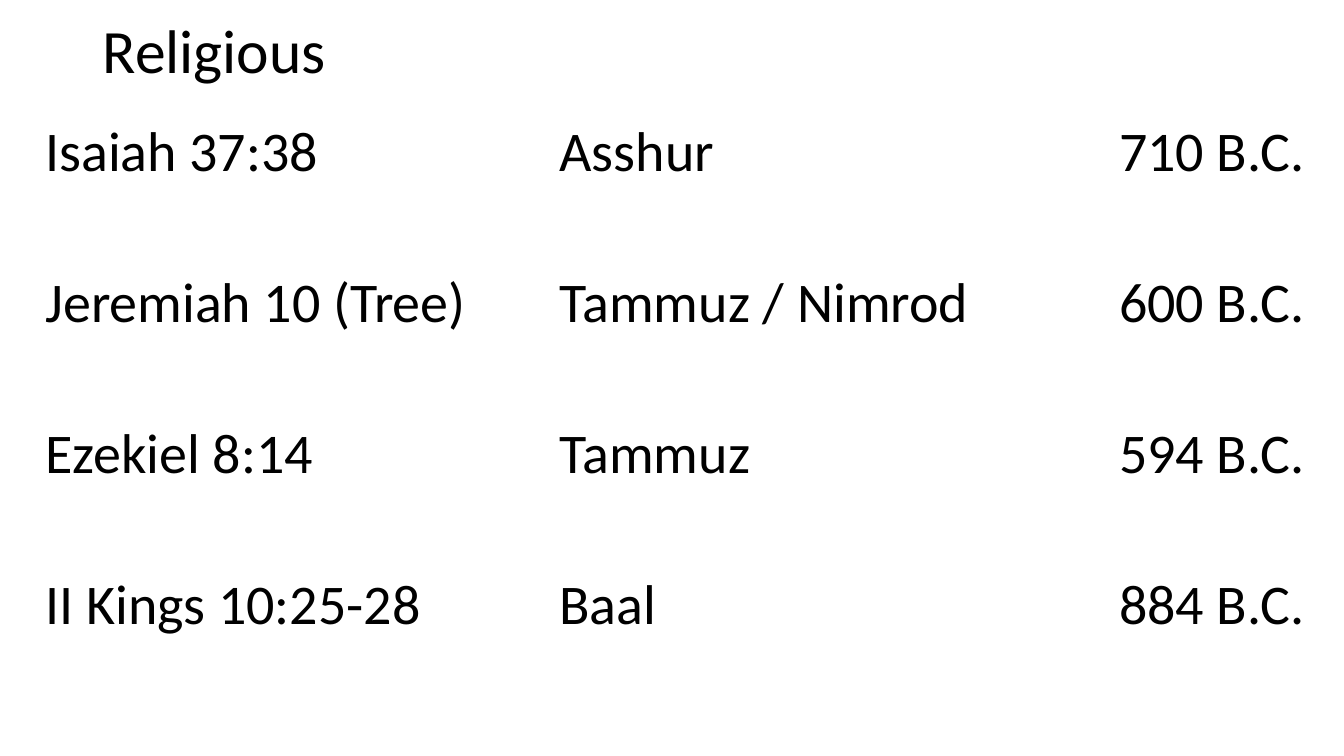
from pptx import Presentation
from pptx.dml.color import RGBColor
from pptx.enum.text import MSO_ANCHOR
from pptx.util import Inches, Pt

FONT = "Calibri"
BLACK = "000000"
COLUMN_WIDTHS = (5.1, 5.55, 2.07)
ROW_HEIGHT = 1.5
REFERENCES = (
    ("Isaiah 37:38", "Asshur", "710 B.C."),
    ("Jeremiah 10 (Tree)", "Tammuz / Nimrod", "600 B.C."),
    ("Ezekiel 8:14", "Tammuz", "594 B.C."),
    ("II Kings 10:25-28", "Baal", "884 B.C."),
)


def color(value):
    """Return the colour for a hex string."""
    return RGBColor.from_string(value)


def write(tf, text, size):
    """Put one styled paragraph in a text frame and return it."""
    p = tf.paragraphs[0]
    p.text = text
    p.font.name = FONT
    p.font.size = Pt(size)
    p.font.color.rgb = color(BLACK)
    return p


def add_title(s, text):
    """Add the slide heading."""
    box = s.shapes.add_textbox(Inches(0.92), Inches(-0.16), Inches(11.5), Inches(1.39))
    tf = box.text_frame
    tf.word_wrap = True
    tf.vertical_anchor = MSO_ANCHOR.MIDDLE
    write(tf, text, 44).line_spacing = 0.9


def add_references(s, rows):
    """Add the plain table of references, deities and dates."""
    frame = s.shapes.add_table(
        len(rows), len(COLUMN_WIDTHS), Inches(0.35), Inches(1.12),
        Inches(sum(COLUMN_WIDTHS)), Inches(ROW_HEIGHT * len(rows)))
    table = frame.table
    table.first_row = False
    table.horz_banding = False
    for column, width in zip(table.columns, COLUMN_WIDTHS):
        column.width = Inches(width)
    for row, texts in zip(table.rows, rows):
        for cell, text in zip(row.cells, texts):
            cell.fill.background()
            write(cell.text_frame, text, 40)


def main():
    """Build and save the slide."""
    prs = Presentation()
    prs.slide_width, prs.slide_height = Inches(13.33), Inches(7.5)
    s = prs.slides.add_slide(prs.slide_layouts[6])
    add_title(s, "Religious")
    add_references(s, REFERENCES)
    prs.save("out.pptx")


if __name__ == "__main__":
    main()
